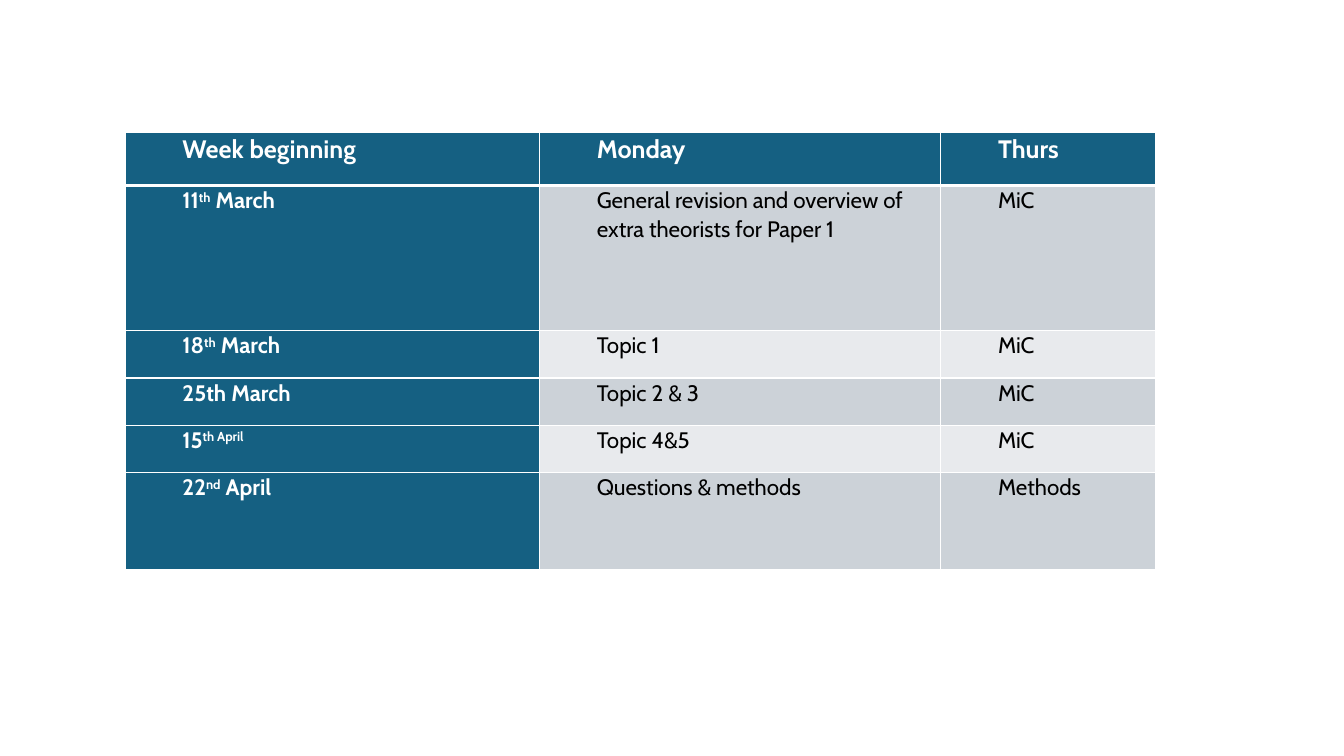
from dataclasses import dataclass

from lxml.etree import SubElement as Sub
from pptx import Presentation
from pptx.dml.color import RGBColor as Rgb
from pptx.oxml.ns import qn
from pptx.table import _Cell as Cell
from pptx.util import Inches, Pt

HUES: dict[str, str] = {
    "head": "156082",
    "dark": "CCD2D8",
    "light": "E8EAED",
    "white": "FFFFFF",
    "black": "000000",
}
FONT = "Cabin"
WIDTHS = (4.11, 3.98, 2.13)


@dataclass(frozen=True)
class Week:
    date: tuple[str, ...]
    monday: str
    thurs: str
    height: float


WEEKS = (
    Week(("Week beginning",), "Monday", "Thurs", 0.53),
    Week(("11", "th", " March"), "General revision and overview of extra theorists for Paper 1", "MiC", 1.44),
    Week(("18", "th", " March"), "Topic 1", "MiC", 0.47),
    Week(("25th March",), "Topic 2 & 3", "MiC", 0.47),
    Week(("15", "th April"), "Topic 4&5", "MiC", 0.47),
    Week(("22", "nd", " April"), "Questions & methods", "Methods", 0.96),
)


def edge(cell: Cell, side: str, width: float) -> None:
    props = cell._tc.get_or_add_tcPr()
    line = Sub(props, qn(f"a:ln{side}"), w=str(Pt(width)))
    fill = Sub(line, qn("a:solidFill"))
    Sub(fill, qn("a:srgbClr"), val=HUES["white"])


def write(cell: Cell, parts: tuple[str, ...], row: int, col: int) -> None:
    para = cell.text_frame.paragraphs[0]
    props = para._p.get_or_add_pPr()
    props.set("marL", str(Inches(0.5)))
    props.set("indent", "0")
    para.line_spacing = 1.07
    para.space_after = Pt(8 if col == 2 else 0)
    bold = row == 0 or col == 0
    font = para.font
    font.name = FONT
    font.size = Pt(16 if row else 18)
    font.bold = bold
    font.color.rgb = Rgb.from_string(HUES["white" if bold else "black"])
    for order, text in enumerate(parts):
        run = para.add_run()
        run.text = text
        if order == 1:
            run._r.get_or_add_rPr().set("baseline", "30000")


def style(cell: Cell, row: int, col: int) -> None:
    cell.margin_left = cell.margin_right = Inches(0.07)
    cell.margin_top = cell.margin_bottom = 0
    thick = {(0, "B"), (1, "T")}
    for side in "LRTB":
        edge(cell, side, 3 if (row, side) in thick else 1)
    hue = "head" if row == 0 or col == 0 else "dark" if row % 2 else "light"
    cell.fill.solid()
    cell.fill.fore_color.rgb = Rgb.from_string(HUES[hue])


def main() -> None:
    deck = Presentation()
    deck.slide_width, deck.slide_height = Inches(13.33), Inches(7.5)
    slide = deck.slides.add_slide(deck.slide_layouts[6])
    high = sum(week.height for week in WEEKS)
    frame = slide.shapes.add_table(
        len(WEEKS), len(WIDTHS), Inches(1.24), Inches(1.31), Inches(sum(WIDTHS)), Inches(high)
    )
    table = frame.table
    for col, width in enumerate(WIDTHS):
        table.columns[col].width = Inches(width)
    for row, week in enumerate(WEEKS):
        table.rows[row].height = Inches(week.height)
        for col, parts in enumerate((week.date, (week.monday,), (week.thurs,))):
            cell = table.cell(row, col)
            style(cell, row, col)
            write(cell, parts, row, col)
    deck.save("out.pptx")


if __name__ == "__main__":
    main()
